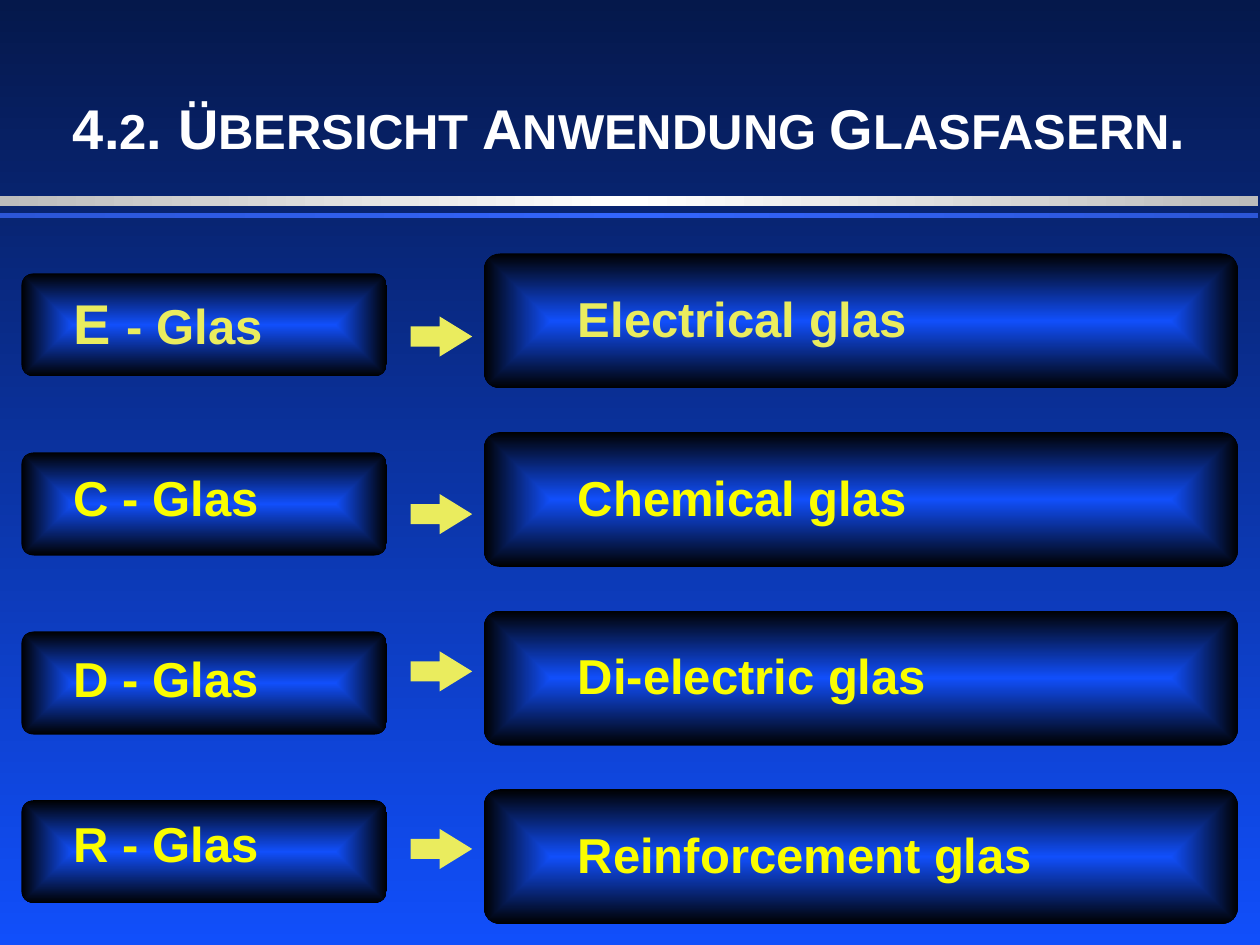
from lxml import etree
from pptx import Presentation
from pptx.dml.color import RGBColor
from pptx.enum.shapes import MSO_SHAPE as Shape
from pptx.enum.text import MSO_ANCHOR as Anchor, MSO_AUTO_SIZE as AutoSize, PP_ALIGN as Align
from pptx.oxml.ns import qn
from pptx.util import Cm, Pt

NAVY = RGBColor(0x05, 0x18, 0x4B)
BLUE = RGBColor(0x11, 0x4F, 0xFB)
BLACK = RGBColor(0x00, 0x00, 0x00)
WHITE = RGBColor(0xFF, 0xFF, 0xFF)
SILVER = RGBColor(0xBC, 0xBC, 0xBC)
DULL_BLUE = RGBColor(0x2C, 0x56, 0xD7)
BRIGHT_BLUE = RGBColor(0x33, 0x65, 0xFB)
YELLOW = RGBColor(0xFA, 0xFD, 0x00)
PALE_YELLOW = RGBColor(0xEA, 0xEC, 0x5E)

TITLE = [("4.", 32), ("2", 28), (". Ü", 32), ("BERSICHT ", 28), ("A", 32),
         ("NWENDUNG ", 28), ("G", 32), ("LASFASERN", 28), (".", 32)]
FIRST_ROW_TOP = 5.11
ROW_PITCH = 3.6
ROWS = [
    ([("E ", 32), ("- Glas", 28)], "Electrical glas", PALE_YELLOW, 5.51, 5.69, 6.38),
    ([("C - Glas", 28)], "Chemical glas", YELLOW, 9.12, 9.3, 9.96),
    ([("D - Glas", 28)], "Di-electric glas", YELLOW, 12.73, 12.95, 13.13),
    ([("R - Glas", 28)], "Reinforcement glas", YELLOW, 16.13, 16.28, 16.71),
]


class SlideBuilder:
    font = "Arial"

    def __init__(self, deck):
        self.slide = deck.slides.add_slide(deck.slide_layouts[5])

    def apply_gradient(self, fill, properties, colors, angle=None):
        fill.solid()
        solid = properties.find(qn("a:solidFill"))
        gradient = etree.Element(qn("a:gradFill"), rotWithShape="1")
        stops = etree.SubElement(gradient, qn("a:gsLst"))
        for index, color in enumerate(colors):
            position = 100000 * index // (len(colors) - 1)
            stop = etree.SubElement(stops, qn("a:gs"), pos=str(position))
            etree.SubElement(stop, qn("a:srgbClr"), val=str(color))
        if angle is None:
            shade = etree.SubElement(gradient, qn("a:path"), {"path": "shape"})
            etree.SubElement(shade, qn("a:fillToRect"), dict.fromkeys("ltrb", "50000"))
        else:
            etree.SubElement(gradient, qn("a:lin"), ang=str(angle * 60000), scaled="0")
        properties.replace(solid, gradient)

    def background(self, colors):
        fill = self.slide.background.fill
        fill.solid()
        properties = self.slide.element.find(".//" + qn("p:bgPr"))
        self.apply_gradient(fill, properties, colors, 90)

    def shape(self, kind, left, top, width, height):
        shape = self.slide.shapes.add_shape(kind, Cm(left), Cm(top), Cm(width), Cm(height))
        shape.shadow.inherit = False
        shape.line.fill.background()
        return shape

    def bar(self, top, height, colors):
        bar = self.shape(Shape.RECTANGLE, 0, top, 25.37, height)
        self.apply_gradient(bar.fill, bar.element.spPr, colors, 0)

    def panel(self, left, top, width, height):
        panel = self.shape(Shape.ROUNDED_RECTANGLE, left, top, width, height)
        panel.adjustments[0] = 0.125
        self.apply_gradient(panel.fill, panel.element.spPr, [BLUE, BLACK])

    def arrow(self, left, top):
        arrow = self.shape(Shape.RIGHT_ARROW, left, top, 1.24, 0.81)
        arrow.adjustments[1] = 0.81
        arrow.fill.solid()
        arrow.fill.fore_color.rgb = PALE_YELLOW

    def add_spans(self, para, parts, color):
        for text, size in parts:
            span = para.add_run()
            span.text = text
            span.font.name = self.font
            span.font.size = Pt(size)
            span.font.bold = True
            span.font.color.rgb = color

    def title(self, parts):
        title = self.slide.shapes.title
        title.left, title.top, title.width, title.height = Cm(0.2), Cm(0.63), Cm(24.97), Cm(2.74)
        frame = title.text_frame
        frame.vertical_anchor = Anchor.BOTTOM
        frame.word_wrap = True
        frame.auto_size = AutoSize.NONE
        para = frame.paragraphs[0]
        para.alignment = Align.CENTER
        self.add_spans(para, parts, WHITE)

    def label(self, left, top, width, height, parts, color, level=0):
        box = self.slide.shapes.add_textbox(Cm(left), Cm(top), Cm(width), Cm(height))
        frame = box.text_frame
        frame.word_wrap = True
        frame.auto_size = AutoSize.SHAPE_TO_FIT_TEXT
        para = frame.paragraphs[0]
        para.level = level
        properties = para._p.get_or_add_pPr()
        properties.set("marL", str(Cm(1.27 * level)))
        properties.set("indent", "0")
        spacing = etree.SubElement(properties, qn("a:spcBef"))
        etree.SubElement(spacing, qn("a:spcPct"), val="20000")
        self.add_spans(para, parts, color)


def main():
    deck = Presentation()
    deck.slide_width, deck.slide_height = Cm(25.4), Cm(19.05)
    page = SlideBuilder(deck)
    page.background([NAVY, BLUE])
    page.bar(3.96, 0.2, [SILVER, WHITE, SILVER])
    page.bar(4.29, 0.1, [DULL_BLUE, BRIGHT_BLUE, DULL_BLUE])
    page.title(TITLE)
    for index, (name, meaning, color, panel_top, name_top, arrow_top) in enumerate(ROWS):
        row_top = FIRST_ROW_TOP + index * ROW_PITCH
        page.panel(0.43, panel_top, 7.37, 2.08)
        page.panel(9.75, row_top, 15.21, 2.72)
        page.label(1.24, name_top, 6.58, 1.42, name, color)
        page.label(10.13, row_top + 0.58, 13.36, 1.42, [(meaning, 28)], color, level=1)
        page.arrow(8.28, arrow_top)
    deck.save("out.pptx")


if __name__ == "__main__":
    main()
